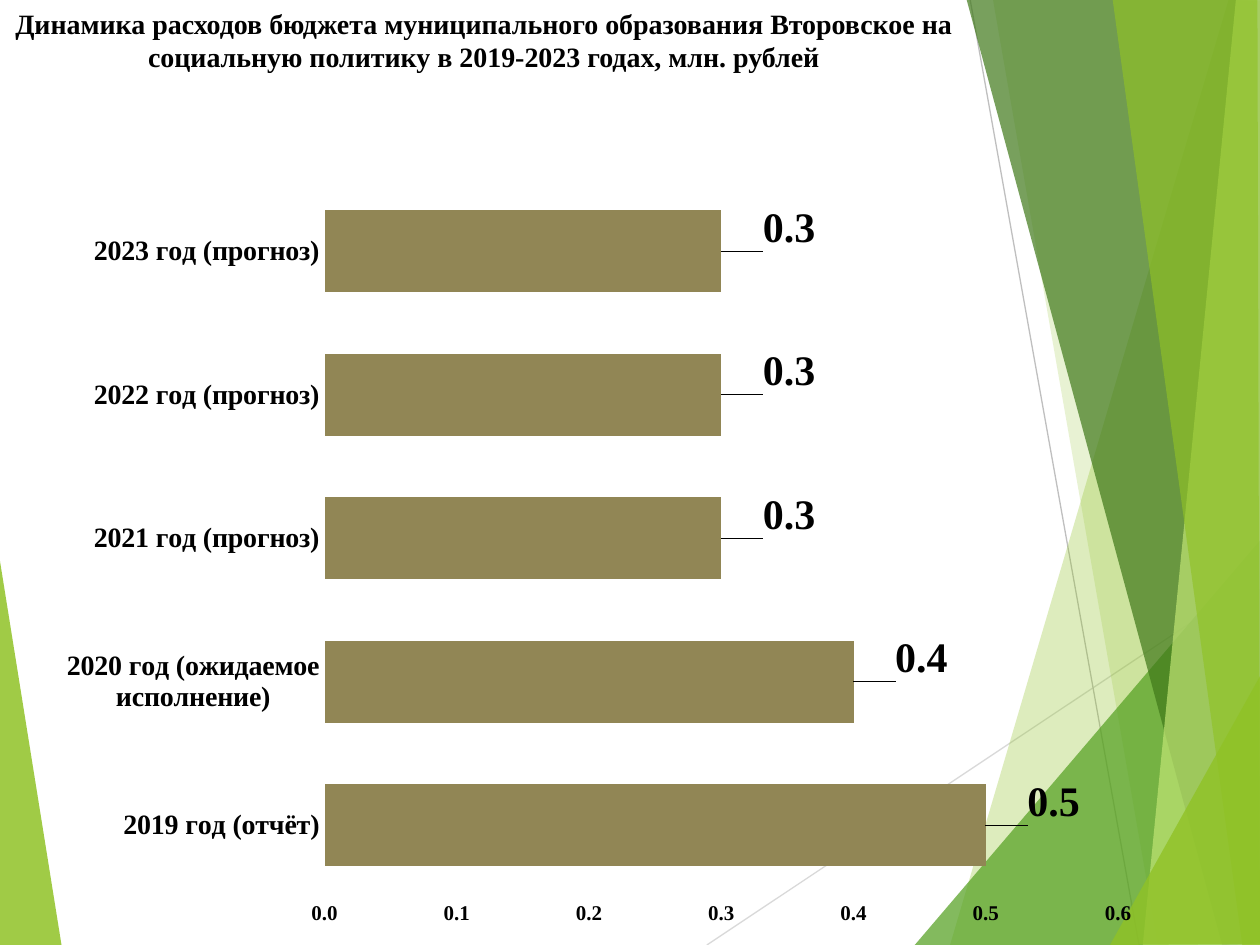
import pptx
import pptx.chart.data
import pptx.dml.color
import pptx.enum.chart
import pptx.enum.shapes
import pptx.enum.text
import pptx.oxml
import pptx.oxml.ns
import pptx.util
from lxml import etree

Inches = pptx.util.Inches
FONT = "Times New Roman"
BLACK = "000000"
TITLE = ("Динамика расходов бюджета муниципального образования Второвское на "
         "социальную политику в 2019-2023 годах, млн. рублей")

LEFT_WEDGE = ("90C226", 85, [(-0.01, 4.39), (0.49, 7.51), (-0.01, 7.5)])
RAYS = [
    ("D9D9D9", (5.61, 7.5), (10.01, 4.57)),
    ("BFBFBF", (7.7, 0), (9.04, 7.5)),
]
# Colour, opacity in percent, corners
RIGHT_FACETS = [
    ("90C226", 30, [(9.75, 0), (7.54, 7.5), (10.02, 7.51), (10.01, 0.01)]),
    ("90C226", 20, [(7.88, -0.01), (9.19, 7.5), (10.01, 7.5), (10.01, -0.01)]),
    ("54A021", 72, [(7.26, 7.5), (10, 4.29), (10.01, 7.5)]),
    ("3F7819", 70, [(7.67, -0.01), (9.7, 7.5), (10.01, 7.49), (10.01, -0.01)]),
    ("C0E474", 70, [(9.81, -0.01), (9.07, 7.5), (10.01, 7.5), (10, -0.01)]),
    ("90C226", 65, [(8.83, -0.01), (9.86, 7.5), (10, 7.5), (9.98, -0.01)]),
    ("90C226", 80, [(8.81, 7.5), (10.01, 5.35), (10.01, 7.49)]),
]

# Category, value, label shift as a fraction of the chart
SPENDING = [
    ("2019 год (отчёт)", 0.5, (0.03, -0.03)),
    ("2020 год (ожидаемое исполнение)", 0.4, (0.03, -0.03)),
    ("2021 год (прогноз)", 0.3, (0.03, -0.03)),
    ("2022 год (прогноз)", 0.3, (0.03, -0.03)),
    ("2023 год (прогноз)", 0.3, (0.03, -0.03)),
]


def rgb(value):
    return pptx.dml.color.RGBColor.from_string(value)


def style_font(font, size, name=FONT, bold=True):
    font.name = name
    font.size = pptx.util.Pt(size)
    font.bold = bold
    font.color.rgb = rgb(BLACK)


def add_facet(page, color, opacity, corners):
    points = [(Inches(x), Inches(y)) for x, y in corners]
    builder = page.shapes.build_freeform(*points[0])
    builder.add_line_segments(points[1:], close=True)
    facet = builder.convert_to_shape()
    facet.shadow.inherit = False
    facet.line.fill.background()
    facet.fill.solid()
    facet.fill.fore_color.rgb = rgb(color)
    tint = facet._element.spPr.find(".//" + pptx.oxml.ns.qn("a:srgbClr"))
    etree.SubElement(tint, pptx.oxml.ns.qn("a:alpha"), val=str(opacity * 1000))


def add_ray(page, color, start, end):
    ray = page.shapes.add_connector(
        pptx.enum.shapes.MSO_CONNECTOR.STRAIGHT,
        *(Inches(length) for length in start + end))
    ray.line.color.rgb = rgb(color)
    ray.line.width = pptx.util.Pt(0.75)
    etree.SubElement(ray._element.spPr, pptx.oxml.ns.qn("a:effectLst"))


def add_title(page):
    box = page.shapes.add_textbox(0, 0, Inches(7.68), Inches(1.09))
    box.text_frame.word_wrap = True
    para = box.text_frame.paragraphs[0]
    para.alignment = pptx.enum.text.PP_ALIGN.CENTER
    span = para.add_run()
    span.text = TITLE
    style_font(span.font, 16)


def manual_layout(**settings):
    """Build a c:layout element from its settings, given in schema order."""
    fields = "".join(f'<c:{key} val="{value}"/>' for key, value in settings.items())
    return pptx.oxml.parse_xml(
        f'<c:layout {pptx.oxml.ns.nsdecls("c")}>'
        f"<c:manualLayout>{fields}</c:manualLayout></c:layout>")


def place_plot(chart):
    area = chart._chartSpace.chart.plotArea
    for layout in area.findall(pptx.oxml.ns.qn("c:layout")):
        area.remove(layout)
    area.insert(0, manual_layout(
        layoutTarget="inner", xMode="edge", yMode="edge",
        x=0.265, y=0.025, w=0.648, h=0.914))


def style_axis(axis, size):
    axis.has_major_gridlines = False
    axis.major_tick_mark = pptx.enum.chart.XL_TICK_MARK.NONE
    axis.minor_tick_mark = pptx.enum.chart.XL_TICK_MARK.NONE
    axis.format.line.fill.background()
    style_font(axis.tick_labels.font, size)


def add_value_labels(chart, series):
    for index, (_, _, (shift_x, shift_y)) in enumerate(SPENDING):
        label = series.points[index].data_label
        style_font(label.font, 24)
        label.position = pptx.enum.chart.XL_LABEL_POSITION.OUTSIDE_END
    for element, (_, _, (shift_x, shift_y)) in zip(
            chart._chartSpace.xpath(".//c:dLbl"), SPENDING):
        element.insert(1, manual_layout(x=shift_x, y=shift_y))
    labels = series.data_labels
    labels.show_value = True
    labels.number_format = "0.0"
    labels.number_format_is_linked = False
    style_font(labels.font, 24)


def add_spending_chart(page):
    data = pptx.chart.data.CategoryChartData(number_format="0.0")
    data.categories = [name for name, _, _ in SPENDING]
    data.add_series("Series 1", [value for _, value, _ in SPENDING])
    chart = page.shapes.add_chart(
        pptx.enum.chart.XL_CHART_TYPE.BAR_CLUSTERED,
        Inches(0), Inches(1.27), Inches(9.72), Inches(6.23), data).chart
    chart.has_legend = False
    chart.has_title = False
    style_font(chart.font, 10, "Lato", False)
    place_plot(chart)

    style_axis(chart.category_axis, 16)
    values = chart.value_axis
    style_axis(values, 12)
    values.minimum_scale, values.maximum_scale, values.major_unit = 0, 0.6, 0.1
    values.tick_labels.number_format = "0.0"
    values.tick_labels.number_format_is_linked = False

    plot = chart.plots[0]
    plot.gap_width = 75
    plot.vary_by_categories = False
    series = plot.series[0]
    series.format.fill.solid()
    series.format.fill.fore_color.rgb = rgb("918655")
    add_value_labels(chart, series)


def main():
    deck = pptx.Presentation()
    deck.slide_width, deck.slide_height = Inches(10), Inches(7.5)
    page = deck.slides.add_slide(deck.slide_layouts[6])
    add_facet(page, *LEFT_WEDGE)
    for ray in RAYS:
        add_ray(page, *ray)
    for facet in RIGHT_FACETS:
        add_facet(page, *facet)
    add_title(page)
    add_spending_chart(page)
    deck.save("out.pptx")


if __name__ == "__main__":
    main()
